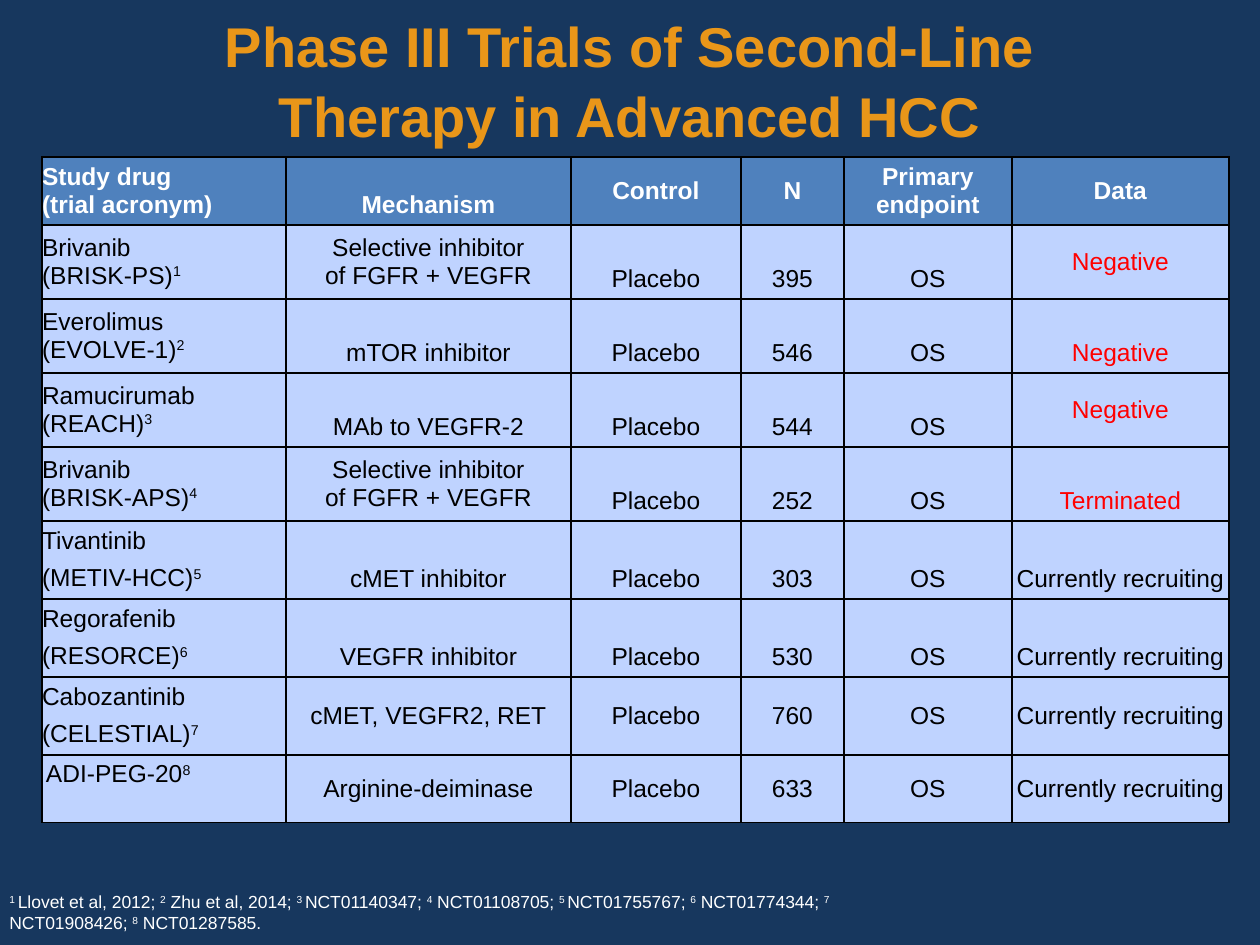
from lxml.etree import SubElement
from pptx import Presentation
from pptx.dml.color import RGBColor as Rgb
from pptx.enum.text import MSO_ANCHOR as Anchor, PP_ALIGN as Align
from pptx.oxml.ns import qn
from pptx.util import Emu, Pt

PX_PER_INCH = 126
COLORS = {
    "background": "17375E", "title": "E99619", "header": "4F81BD",
    "body": "BFD3FF", "border": "000000", "text": "000000",
    "light": "FFFFFF", "stopped": "FF0000",
}
ANCHORS = {"t": Anchor.TOP, "m": Anchor.MIDDLE, "b": Anchor.BOTTOM}

TITLE = "Phase III Trials of Second-Line\nTherapy in Advanced HCC"
HEADER = ("Study drug\n(trial acronym)", "Mechanism", "Control", "N",
          "Primary endpoint", "Data")
TRIALS = [
    ("Brivanib\n(BRISK-PS)^1^", "Selective inhibitor\nof FGFR + VEGFR", "395", "Negative", "mmbbbm"),
    ("Everolimus\n(EVOLVE-1)^2^", "mTOR inhibitor", "546", "Negative", "mbbbbb"),
    ("Ramucirumab\n(REACH)^3^", "MAb to VEGFR-2", "544", "Negative", "mbbbbm"),
    ("Brivanib\n(BRISK-APS)^4^", "Selective inhibitor\nof FGFR + VEGFR", "252", "Terminated", "mmbbbb"),
    ("Tivantinib|(METIV-HCC)^5^", "cMET inhibitor", "303", "Currently recruiting", "mbbbbb"),
    ("Regorafenib|(RESORCE)^6^", "VEGFR inhibitor", "530", "Currently recruiting", "mbbbbb"),
    ("Cabozantinib|(CELESTIAL)^7^", "cMET, VEGFR2, RET", "760", "Currently recruiting", "mmmmmm"),
    ("ADI-PEG-20^8^", "Arginine-deiminase", "633", "Currently recruiting", "tmmmmm"),
]
REFERENCES = ("^1 ^Llovet et al, 2012; ^2^ Zhu et al, 2014; ^3 ^NCT01140347; "
              "^4^ NCT01108705; ^5 ^NCT01755767; ^6^ NCT01774344; "
              "^7^ NCT01908426; ^8^ NCT01287585.")
COLUMN_WIDTHS = (244, 285, 170, 103, 168, 217)
ROW_HEIGHTS = (68, 74, 74, 74, 74, 78, 78, 78, 68)


def px(length):
    """Turn pixels into EMU."""
    return Emu(round(length * 914400 / PX_PER_INCH))


def rgb(name):
    """Look up a named colour."""
    return Rgb.from_string(COLORS[name])


def apply(target, values):
    """Set every attribute in values on target."""
    for name, value in values.items():
        setattr(target, name, value)


def write(frame, text, size, color, bold=False, **layout):
    """Write text: | parts paragraphs, newline breaks lines, ^ encloses superscripts."""
    for index, content in enumerate(text.split("|")):
        paragraph = frame.add_paragraph() if index else frame.paragraphs[0]
        apply(paragraph, layout)
        if index:
            paragraph.space_before = Pt(0.4 * size)
        for position, piece in enumerate(content.split("^")):
            for number, line in enumerate(piece.split("\n")):
                if number:
                    paragraph.add_line_break()
                if not line:
                    continue
                run = paragraph.add_run()
                run.text = line
                apply(run.font, {"name": "Arial", "size": Pt(size), "bold": bold})
                run.font.color.rgb = rgb(color)
                if position % 2:
                    run.font._element.set("baseline", "30000")
        for line_break in paragraph._p.findall(qn("a:br")):
            SubElement(line_break, qn("a:rPr"), sz=str(size * 100))


def add_title(slide, left, top, width, height):
    """Place the slide title in its placeholder."""
    title = slide.shapes.title
    apply(title, {"left": px(left), "top": px(top),
                  "width": px(width), "height": px(height)})
    title.text_frame.vertical_anchor = Anchor.MIDDLE
    write(title.text_frame, TITLE, 32, "title", True,
          alignment=Align.CENTER, line_spacing=1.04)


def format_cell(cell, fill, anchor):
    """Give a cell its borders, fill, margins and anchor."""
    properties = cell._tc.get_or_add_tcPr()
    for side in "LRTB":
        border = SubElement(properties, qn(f"a:ln{side}"), w=str(Pt(1)))
        solid = SubElement(border, qn("a:solidFill"))
        SubElement(solid, qn("a:srgbClr"), val=COLORS["border"])
    cell.fill.solid()
    cell.fill.fore_color.rgb = rgb(fill)
    apply(cell, {"margin_left": 0, "margin_right": 0, "margin_top": px(6),
                 "margin_bottom": px(6), "vertical_anchor": ANCHORS[anchor]})


def add_trials(slide, left, top):
    """Place the table of trials."""
    rows = [(HEADER, "mbmmmm")] + [
        ((drug, mechanism, "Placebo", size, "OS", outcome), anchors)
        for drug, mechanism, size, outcome, anchors in TRIALS]
    table = slide.shapes.add_table(
        len(rows), len(HEADER), px(left), px(top),
        px(sum(COLUMN_WIDTHS)), px(sum(ROW_HEIGHTS))).table
    for column, width in zip(table.columns, COLUMN_WIDTHS):
        column.width = px(width)
    for row, height in zip(table.rows, ROW_HEIGHTS):
        row.height = px(height)
    for r, (texts, anchors) in enumerate(rows):
        for c, (text, anchor) in enumerate(zip(texts, anchors)):
            cell = table.cell(r, c)
            format_cell(cell, "body" if r else "header", anchor)
            color = "text" if r else "light"
            if text in ("Negative", "Terminated"):
                color = "stopped"
            write(cell.text_frame, text, 14, color, r == 0,
                  alignment=Align.CENTER if c else Align.LEFT)
    table.cell(len(TRIALS), 0).margin_left = px(4)


def add_references(slide, left, top, width, height):
    """Place the numbered references."""
    references = slide.shapes.add_textbox(px(left), px(top), px(width), px(height))
    references.text_frame.word_wrap = True
    write(references.text_frame, REFERENCES, 10, "light")


def main():
    """Build and save the slide."""
    deck = Presentation()
    apply(deck, {"slide_width": px(1260), "slide_height": px(945)})
    slide = deck.slides.add_slide(deck.slide_layouts[5])
    slide.background.fill.solid()
    slide.background.fill.fore_color.rgb = rgb("background")
    add_trials(slide, 42, 157)
    add_title(slide, 63, 0, 1134, 157)
    add_references(slide, -3, 885, 853, 55)
    deck.save("out.pptx")


if __name__ == "__main__":
    main()
